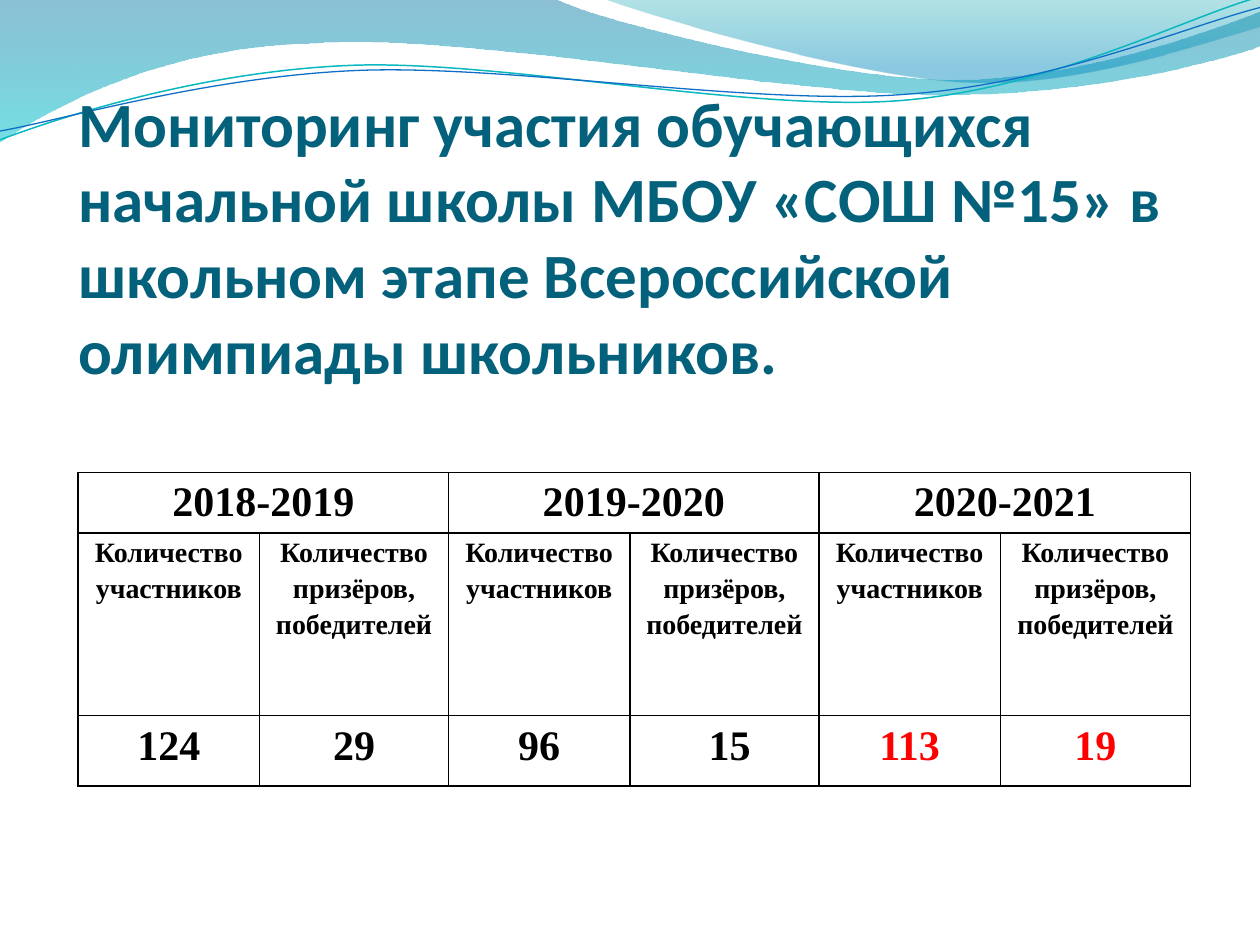
from lxml import etree
from pptx import Presentation
from pptx.dml.color import RGBColor
from pptx.enum.text import MSO_ANCHOR, MSO_AUTO_SIZE, PP_ALIGN
from pptx.oxml.ns import qn
from pptx.util import Inches, Pt

BOTTOM, NO_FIT = MSO_ANCHOR.BOTTOM, MSO_AUTO_SIZE.NONE
LEFT, CENTER = PP_ALIGN.LEFT, PP_ALIGN.CENTER

TITLE = ("Мониторинг участия обучающихся начальной школы МБОУ «СОШ №15» "
         "в школьном этапе Всероссийской олимпиады школьников.")
YEARS = ["2018-2019", "2019-2020", "2020-2021"]
HEADS = ["Количество участников", "Количество призёров, победителей"]
COUNTS = ["124", "29", "96", " 15", "113", "19"]
COLS = [1.44, 1.5, 1.44, 1.5, 1.44, 1.51]
ROWS = [0.48, 1.45, 0.56]

# A path is a list of points: two numbers draw a line, six a Bezier curve.
# A gradient stop is position, colour, opacity in percent.
BANDS = [
    ([(0, 0), (4.4, -0.01), (4.76, 0.17, 6.64, 0.63, 7.58, 0.63),
      (8.53, 0.63, 9.58, 0.26, 10, 0.09), (10.01, 0.36),
      (9.83, 0.44, 8.7, 0.76, 7.46, 0.75), (6.22, 0.75, 3.82, 0.28, 2.57, 0.34),
      (1.29, 0.36, 0.46, 0.83, -0.01, 1.13)],
     [(0, "0074A1", 45), (1, "00C6CF", 55)]),
    ([(4.79, -0.01), (5.09, 0.11, 6.82, 0.62, 7.69, 0.65),
      (8.56, 0.69, 9.61, 0.32, 10, 0.21), (10, 0)],
     [(0, "00A1A9", 30), (0.8, "008BBF", 45)]),
]
WAVES = [
    ([(0, 1.11), (0.48, 0.93, 1.58, 0.57, 2.77, 0.52),
      (3.95, 0.47, 5.93, 0.89, 7.13, 0.8), (8.33, 0.71, 9.38, 0.15, 9.98, -0.02)],
     "0AB8BF", 0.85),
    ([(0, 1.04), (0.47, 0.96, 1.64, 0.61, 2.83, 0.56),
      (4.03, 0.51, 5.97, 0.84, 7.17, 0.75), (8.36, 0.67, 9.41, 0.21, 10, 0.06)],
     "0F6FC6", 0.75),
]


def rgb(code):
    return RGBColor.from_string(code)


def draw(slide, path, close):
    """Build the outline from its end points, then bend the curved sides."""
    ends = [(Inches(part[-2]), Inches(part[-1])) for part in path]
    pen = slide.shapes.build_freeform(*ends[0])
    pen.add_line_segments(ends[1:], close=close)
    shape = pen.convert_to_shape()
    shape.shadow.inherit = False
    sides = list(shape.element.iter(qn("a:lnTo")))
    for side, part in zip(sides, path[1:]):
        if len(part) == 6:
            side.tag = qn("a:cubicBezTo")
            for i in (0, 2):
                dot = etree.Element(qn("a:pt"), x=str(Inches(part[i]) - shape.left),
                                    y=str(Inches(part[i + 1]) - shape.top))
                side.insert(i // 2, dot)
    return shape


def add_band(slide, path, stops):
    shape = draw(slide, path, True)
    shape.line.fill.background()
    shape.fill.gradient()
    shape.fill.gradient_angle = 270
    for stop, (place, color, alpha) in zip(shape.fill.gradient_stops, stops):
        stop.position = place
        stop.color.rgb = rgb(color)
    tones = shape.element.spPr.iter(qn("a:srgbClr"))
    for tone, (place, color, alpha) in zip(tones, stops):
        etree.SubElement(tone, qn("a:alpha"), val=str(alpha * 1000))


def add_wave(slide, path, color, width):
    shape = draw(slide, path, False)
    shape.fill.background()
    shape.line.color.rgb = rgb(color)
    shape.line.width = Pt(width)


def write(para, text, font, size, color, align):
    para.alignment = align
    run = para.add_run()
    run.text = text
    run.font.name, run.font.size, run.font.bold = font, Pt(size), True
    run.font.color.rgb = rgb(color)


def add_border(cell):
    props = cell._tc.get_or_add_tcPr()
    for side in ("lnL", "lnR", "lnT", "lnB"):
        line = etree.SubElement(props, qn("a:" + side), w=str(Pt(1)))
        fill = etree.SubElement(line, qn("a:solidFill"))
        etree.SubElement(fill, qn("a:srgbClr"), val="000000")


def fill_cell(cell, text, size, color="000000"):
    cell.margin_left = cell.margin_right = Inches(0.07)
    cell.margin_top = cell.margin_bottom = 0
    para = cell.text_frame.paragraphs[0]
    para.line_spacing = 1.15
    write(para, text, "Times New Roman", size, color, CENTER)


def add_title(slide):
    title = slide.shapes.title
    slide.shapes._spTree.append(title.element)  # in front of the waves
    title.left, title.top = Inches(0.62), Inches(2.42)
    title.width, title.height = Inches(9), Inches(1.25)
    frame = title.text_frame
    frame.word_wrap, frame.auto_size = True, NO_FIT
    frame.vertical_anchor = BOTTOM
    frame.margin_left = frame.margin_right = 0
    frame.margin_top, frame.margin_bottom = Inches(0.05), Inches(0.6)
    write(frame.paragraphs[0], TITLE, "Calibri", 36, "04617B", LEFT)


def add_counts(slide):
    table = slide.shapes.add_table(
        len(ROWS), len(COLS), Inches(0.62), Inches(3.75),
        Inches(sum(COLS)), Inches(sum(ROWS))).table
    table.first_row = table.horz_banding = False
    for col, width in zip(table.columns, COLS):
        col.width = Inches(width)
    for row, height in zip(table.rows, ROWS):
        row.height = Inches(height)
    for cell in table.iter_cells():
        add_border(cell)
        cell.fill.background()
    for i, year in enumerate(YEARS):
        head = table.cell(0, 2 * i)
        head.merge(table.cell(0, 2 * i + 1))
        fill_cell(head, year, 24)
    for i, count in enumerate(COUNTS):
        fill_cell(table.cell(1, i), HEADS[i % 2], 16)
        fill_cell(table.cell(2, i), count, 24, "FF0000" if i >= 4 else "000000")


def main():
    deck = Presentation()
    deck.slide_width, deck.slide_height = Inches(10), Inches(7.5)
    slide = deck.slides.add_slide(deck.slide_layouts[5])
    for band in BANDS:
        add_band(slide, *band)
    for wave in WAVES:
        add_wave(slide, *wave)
    add_title(slide)
    add_counts(slide)
    deck.save("out.pptx")


if __name__ == "__main__":
    main()
